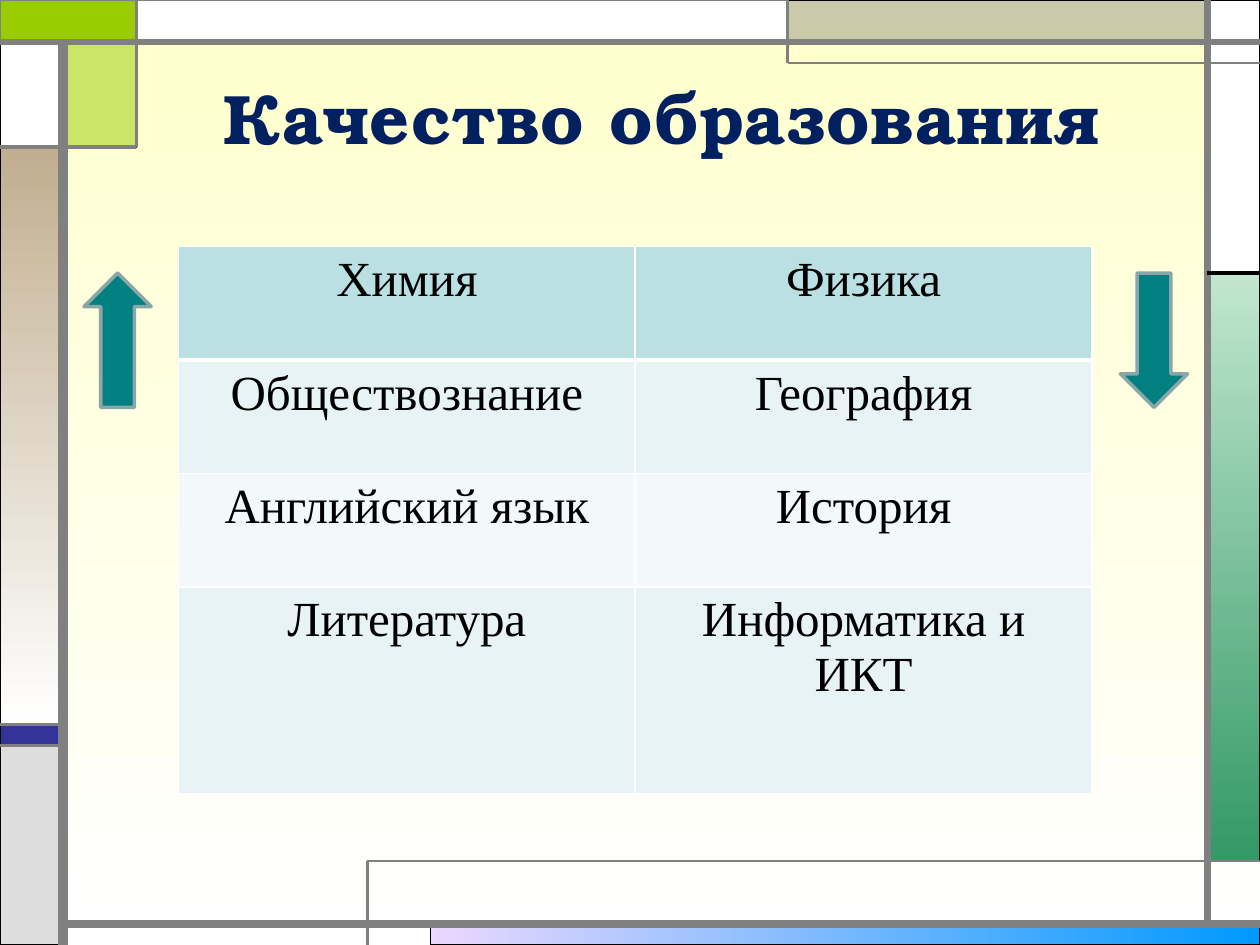
from lxml import etree
from pptx import Presentation
from pptx.dml.color import RGBColor
from pptx.enum.shapes import MSO_CONNECTOR, MSO_SHAPE
from pptx.enum.text import MSO_ANCHOR, PP_ALIGN
from pptx.oxml.ns import qn
from pptx.util import Inches, Pt

RECTANGLE, UP_ARROW = MSO_SHAPE.RECTANGLE, MSO_SHAPE.UP_ARROW
STRAIGHT = MSO_CONNECTOR.STRAIGHT
CENTER, MIDDLE = PP_ALIGN.CENTER, MSO_ANCHOR.MIDDLE

BLACK = RGBColor(0x00, 0x00, 0x00)
WHITE = RGBColor(0xFF, 0xFF, 0xFF)
GRAY = RGBColor(0x80, 0x80, 0x80)
SILVER = RGBColor(0xDD, 0xDD, 0xDD)
CREAM = RGBColor(0xFF, 0xFF, 0xCC)
LILAC = RGBColor(0xEB, 0xD7, 0xFF)
SKY = RGBColor(0x00, 0x99, 0xFF)
MINT = RGBColor(0xC1, 0xE7, 0xCE)
GREEN = RGBColor(0x33, 0x99, 0x66)
INDIGO = RGBColor(0x33, 0x33, 0x99)
KHAKI = RGBColor(0xCA, 0xC9, 0xAA)
LIME = RGBColor(0x99, 0xCC, 0x00)
TAN = RGBColor(0xC1, 0xAE, 0x8F)
NAVY = RGBColor(0x00, 0x20, 0x60)
TEAL = RGBColor(0x00, 0x80, 0x80)
ARROW_EDGE = RGBColor(0x8A, 0xA6, 0xA8)
HEADER = RGBColor(0xBB, 0xE0, 0xE3)
BAND_DARK = RGBColor(0xE7, 0xF3, 0xF4)
BAND_LIGHT = RGBColor(0xF3, 0xF9, 0xFA)

GRID_COLUMNS, GRID_ROWS = 120, 90
UNIT = Inches(10) / GRID_COLUMNS
ACROSS, DOWN = 0, 270

PANELS = [
    ((41, 88, 79, 2), (LILAC, SKY, ACROSS), BLACK, 0.75),
    ((115, 26, 5, 56), (MINT, GREEN, DOWN), BLACK, 0.75),
    ((0, 69, 6, 2), INDIGO, BLACK, 0.75),
    ((0, 71, 6, 19), SILVER, BLACK, 0.75),
    ((115, 0, 5, 26), WHITE, BLACK, 0.75),
    ((75, 0, 40, 4), KHAKI, BLACK, 0.75),
    ((6, 4, 7, 10), LIME, BLACK, 0.75),
    ((0, 14, 6, 55), (TAN, WHITE, DOWN), BLACK, 0.75),
    ((0, 4, 6, 10), WHITE, BLACK, 0.75),
    ((0, 0, 13, 4), LIME, GRAY, 1.5),
    ((13, 0, 62, 4), WHITE, GRAY, 0.75),
]
TRANSLUCENT_PANEL = 6

RULES = [
    ((6, 90, 6, 4), GRAY, 6),
    ((6, 88, 120, 88), GRAY, 4.5),
    ((115, 88, 115, 0), GRAY, 4.5),
    ((0, 4, 120, 4), GRAY, 3),
    ((120, 6, 75, 6), GRAY, 1.5),
    ((75, 6, 75, 0), GRAY, 1.5),
    ((115, 26, 120, 26), BLACK, 2.25),
    ((13, 0, 13, 14), GRAY, 1.5),
    ((13, 14, 0, 14), GRAY, 2.25),
    ((35, 90, 35, 82), GRAY, 1.5),
    ((35, 82, 120, 82), GRAY, 1.5),
    ((6, 69, 0, 69), GRAY, 2.25),
    ((6, 71, 0, 71), GRAY, 2.25),
]

SUBJECTS = [
    ("Химия", "Физика"),
    ("Обществознание", "География"),
    ("Английский язык", "История"),
    ("Литература", "Информатика и ИКТ"),
]
ROW_HEIGHTS = [0.9, 0.9, 0.9, 1.64]
ROW_FILLS = [HEADER, BAND_DARK, BAND_LIGHT, BAND_DARK]


def on_grid(*values):
    """Turn grid units into slide lengths."""
    return [round(value * UNIT) for value in values]


def paint(fill, paint_style):
    """Apply a plain colour or a (start, end, angle) gradient."""
    if isinstance(paint_style, RGBColor):
        fill.solid()
        fill.fore_color.rgb = paint_style
        return
    *colors, angle = paint_style
    fill.gradient()
    fill.gradient_angle = angle
    for stop, color in zip(fill.gradient_stops, colors):
        stop.color.rgb = color


def add_block(slide, kind, box, fill, line_color, line_width):
    """Add a filled and outlined preset shape."""
    shape = slide.shapes.add_shape(kind, *on_grid(*box))
    shape.shadow.inherit = False
    paint(shape.fill, fill)
    shape.line.color.rgb = line_color
    shape.line.width = Pt(line_width)
    return shape


def make_translucent(shape, percent):
    """Set the opacity of a solid fill."""
    color = shape.fill._xPr.find(qn("a:solidFill"))[0]
    etree.SubElement(color, qn("a:alpha"), val=str(percent * 1000))


def add_rule(slide, ends, color, width):
    """Add a straight line without a shadow."""
    connector = slide.shapes.add_connector(STRAIGHT, *on_grid(*ends))
    connector.line.color.rgb = color
    connector.line.width = Pt(width)
    etree.SubElement(connector._element.spPr, qn("a:effectLst"))


def add_centered_run(paragraph, text, font_name, size, color, bold=False):
    """Add one run to a centred paragraph."""
    paragraph.alignment = CENTER
    run = paragraph.add_run()
    run.text = text
    run.font.name = font_name
    run.font.size = Pt(size)
    run.font.color.rgb = color
    run.font.bold = bold
    return run


def add_title(slide, text):
    """Add the slide heading."""
    shape = slide.shapes.add_textbox(*on_grid(12, 3.6, 102, 15))
    frame = shape.text_frame
    frame.word_wrap = True
    frame.vertical_anchor = MIDDLE
    run = add_centered_run(frame.paragraphs[0], text, "TeX Gyre Bonum", 40, NAVY, True)
    run._r.get_or_add_rPr().set("spc", "50")


def set_borders(cell, bottom_width):
    """Draw white borders around a table cell."""
    properties = cell._tc.get_or_add_tcPr()
    widths = {"a:lnL": 1, "a:lnR": 1, "a:lnT": 1, "a:lnB": bottom_width}
    for index, (side, width) in enumerate(widths.items()):
        border = etree.Element(qn(side), w=str(Pt(width)))
        fill = etree.SubElement(border, qn("a:solidFill"))
        etree.SubElement(fill, qn("a:srgbClr"), val=str(WHITE))
        properties.insert(index, border)


def add_subject_table(slide):
    """Add the table of rising and falling subjects."""
    frame = slide.shapes.add_table(len(SUBJECTS), 2, *on_grid(17, 23.5, 87, 52))
    for row_index, (row, subjects) in enumerate(zip(frame.table.rows, SUBJECTS)):
        row.height = Inches(ROW_HEIGHTS[row_index])
        for cell, subject in zip(row.cells, subjects):
            paint(cell.fill, ROW_FILLS[row_index])
            set_borders(cell, 3 if row_index == 0 else 1)
            paragraph = cell.text_frame.paragraphs[0]
            add_centered_run(paragraph, subject, "Times New Roman", 28, BLACK)


def main():
    """Build and save the presentation."""
    presentation = Presentation()
    presentation.slide_width, presentation.slide_height = on_grid(GRID_COLUMNS, GRID_ROWS)
    slide = presentation.slides.add_slide(presentation.slide_layouts[6])
    paint(slide.background.fill, (CREAM, WHITE, DOWN))
    panels = [add_block(slide, RECTANGLE, *panel) for panel in PANELS]
    make_translucent(panels[TRANSLUCENT_PANEL], 50)
    for rule in RULES:
        add_rule(slide, *rule)
    add_title(slide, "Качество образования")
    add_subject_table(slide)
    for left, rotation in ((8, 0), (106.7, 180)):
        arrow = add_block(slide, UP_ARROW, (left, 26, 6.4, 12.8), TEAL, ARROW_EDGE, 2)
        arrow.rotation = rotation
    presentation.save("out.pptx")


if __name__ == "__main__":
    main()
